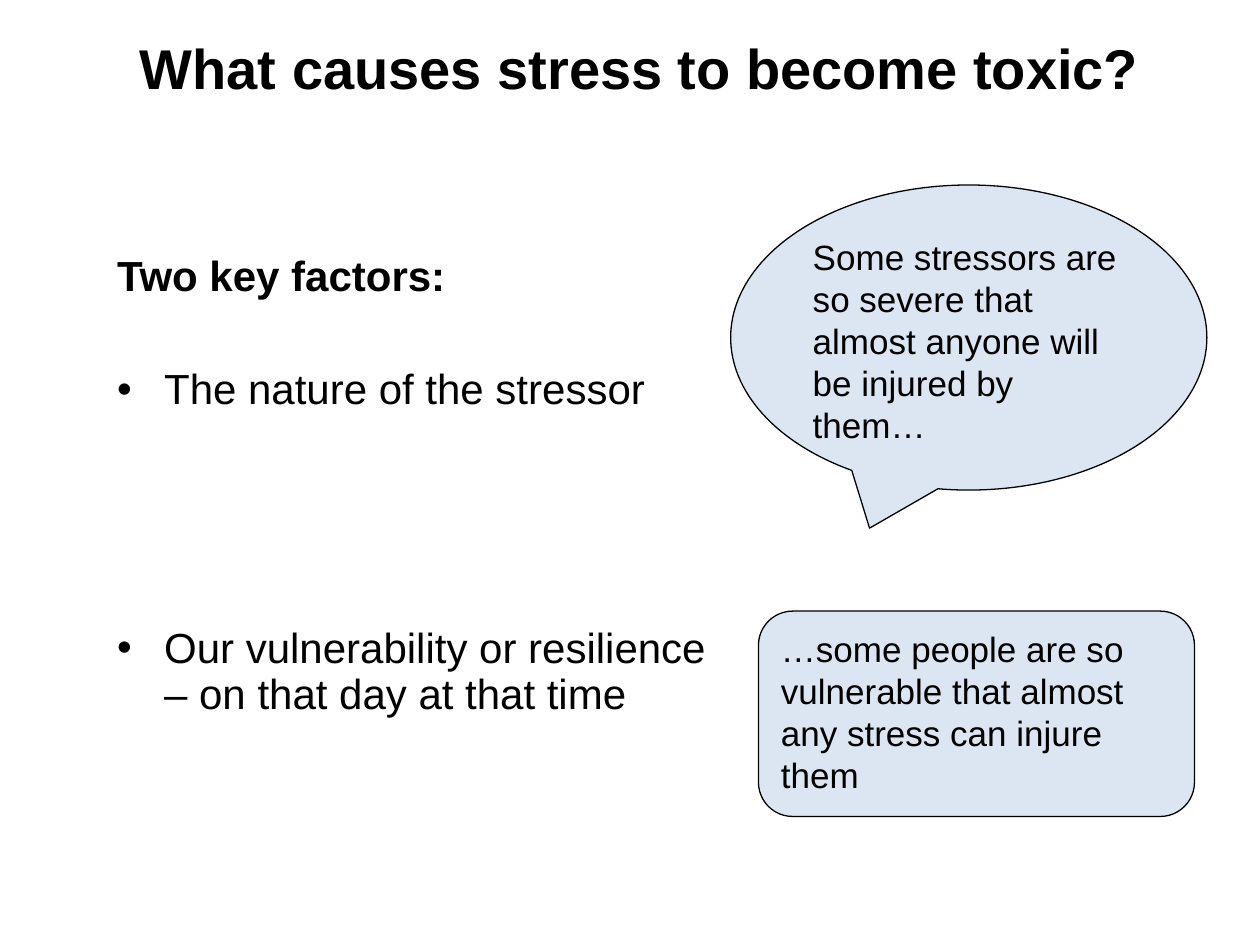
from lxml.etree import SubElement
from pptx import Presentation
from pptx.dml.color import RGBColor
from pptx.enum.shapes import MSO_SHAPE
from pptx.enum.text import MSO_ANCHOR, PP_ALIGN
from pptx.oxml.ns import qn
from pptx.util import Cm, Pt

INK = "000000"
PALE_BLUE = "DCE6F2"
HANGING_INDENT = Cm(0.95)


def colour(hex_string):
    return RGBColor.from_string(hex_string)


def style_runs(paragraph, size, bold=False):
    for run in paragraph.runs:
        run.font.name = "Arial"
        run.font.size = Pt(size)
        run.font.bold = bold
        run.font.color.rgb = colour(INK)


def add_bullet(paragraph):
    properties = paragraph._p.get_or_add_pPr()
    properties.set("marL", str(HANGING_INDENT))
    properties.set("indent", str(-HANGING_INDENT))
    bullet_colour = SubElement(properties, qn("a:buClr"))
    SubElement(bullet_colour, qn("a:srgbClr"), val=INK)
    SubElement(properties, qn("a:buFont"), typeface="Arial")
    SubElement(properties, qn("a:buChar"), char="•")


def add_title(slide, box, wording):
    title = slide.shapes.add_textbox(*box).text_frame
    title.word_wrap = True
    title.vertical_anchor = MSO_ANCHOR.MIDDLE
    title.text = wording
    title.paragraphs[0].alignment = PP_ALIGN.CENTER
    style_runs(title.paragraphs[0], 32, bold=True)


def add_factors(slide, box, heading, factors):
    body = slide.shapes.add_textbox(*box).text_frame
    body.word_wrap = True
    body.margin_top = Cm(1.1)
    body.text = heading
    style_runs(body.paragraphs[0], 24, bold=True)
    for wording, space_before in factors:
        factor = body.add_paragraph()
        factor.text = wording
        add_bullet(factor)
        factor.line_spacing = 0.93
        factor.space_before = Pt(space_before)
        style_runs(factor, 24)


def add_remark(slide, box, outline, wording):
    remark = slide.shapes.add_shape(outline, *box)
    remark.shadow.inherit = False
    remark.fill.solid()
    remark.fill.fore_color.rgb = colour(PALE_BLUE)
    remark.line.color.rgb = colour(INK)
    remark.line.width = Pt(0.75)
    remark.text_frame.word_wrap = True
    remark.text_frame.vertical_anchor = MSO_ANCHOR.TOP
    remark.text_frame.text = wording
    remark.text_frame.paragraphs[0].alignment = PP_ALIGN.LEFT
    style_runs(remark.text_frame.paragraphs[0], 20)


def main():
    deck = Presentation()
    deck.slide_width, deck.slide_height = Cm(25.4), Cm(19.05)
    slide = deck.slides.add_slide(deck.slide_layouts[6])

    add_title(slide, (Cm(1.47), Cm(0.43), Cm(22.86), Cm(1.83)),
              "What causes stress to become toxic?")
    add_factors(slide, (Cm(2.11), Cm(3.94), Cm(12.8), Cm(10.8)),
                "Two key factors:",
                [("The nature of the stressor", 38),
                 ("Our vulnerability or resilience – on that day at that time", 121)])
    add_remark(slide, (Cm(14.73), Cm(3.73), Cm(9.6), Cm(6.15)),
               MSO_SHAPE.OVAL_CALLOUT,
               "Some stressors are so severe that almost anyone will be injured by them…")
    add_remark(slide, (Cm(15.29), Cm(12.32), Cm(8.79), Cm(4.14)),
               MSO_SHAPE.FLOWCHART_ALTERNATE_PROCESS,
               "…some people are so vulnerable that almost any stress can injure them")

    deck.save("out.pptx")


if __name__ == "__main__":
    main()
